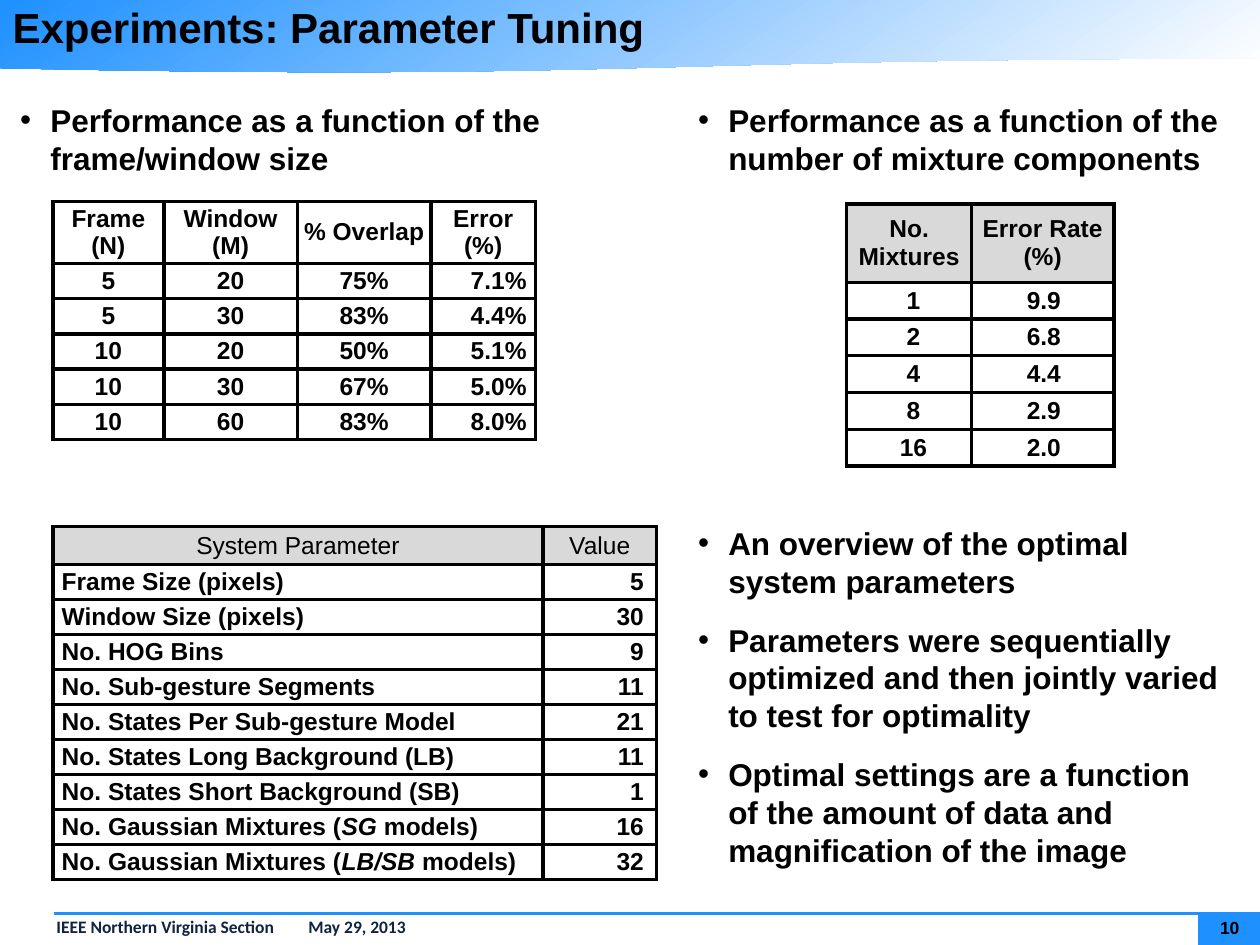
from dataclasses import dataclass

from lxml.etree import SubElement
from pptx import Presentation
from pptx.dml.color import RGBColor
from pptx.enum.shapes import MSO_CONNECTOR as Connector, MSO_SHAPE as Shape
from pptx.enum.text import MSO_ANCHOR as Anchor, MSO_AUTO_SIZE as AutoSize, PP_ALIGN as Align
from pptx.oxml.ns import qn
from pptx.util import Inches, Pt

COLORS = {"blue": "1E90FF", "white": "FFFFFF", "black": "000000",
          "navy": "0F243E", "gray": "D9D9D9"}
WIDTH, HEIGHT = Inches(10), Inches(7.5)
COLUMNS, ROWS = 100, 75
LEFT, CENTER, RIGHT, JUSTIFY = Align.LEFT, Align.CENTER, Align.RIGHT, Align.JUSTIFY


def across(columns: float) -> int:
    return round(WIDTH * columns / COLUMNS)


def down(rows: float) -> int:
    return round(HEIGHT * rows / ROWS)


@dataclass(frozen=True)
class Area:
    left: float
    top: float
    width: float
    height: float

    def box(self) -> tuple[int, int, int, int]:
        return across(self.left), down(self.top), across(self.width), down(self.height)


@dataclass(frozen=True)
class Bullets:
    area: Area
    lines: list[str]


@dataclass(frozen=True)
class Column:
    width: float
    align: Align
    insets: tuple[float, float] = (0.7, 0.7)


@dataclass(frozen=True)
class Grid:
    area: Area
    columns: list[Column]
    header_height: float
    header_fill: str
    header_bold: bool
    header_insets: tuple[float, float]
    lines: list[list[str]]


BULLETS = [
    Bullets(Area(1.6, 8, 42, 6.1),
            ["Performance as a function of the frame/window size"]),
    Bullets(Area(55.4, 8, 42, 6.1),
            ["Performance as a function of the number of mixture components"]),
    Bullets(Area(55.4, 41.6, 42, 27.6),
            ["An overview of the optimal system parameters",
             "Parameters were sequentially optimized and then jointly varied to test for optimality",
             "Optimal settings are a function of the amount of data and magnification of the image"]),
]

GRIDS = [
    Grid(Area(4.2, 16, 38.3, 18.9),
         [Column(8.8, CENTER), Column(10.6, CENTER), Column(10.6, CENTER), Column(8.3, RIGHT)],
         4.9, "white", True, (0.2, 0.2),
         [["Frame (N)", "Window (M)", "% Overlap", "Error (%)"],
          ["5", "20", "75%", "7.1%"],
          ["5", "30", "83%", "4.4%"],
          ["10", "20", "50%", "5.1%"],
          ["10", "30", "67%", "5.0%"],
          ["10", "60", "83%", "8.0%"]]),
    Grid(Area(4.2, 41.8, 47.9, 28),
         [Column(38.9, JUSTIFY), Column(9, RIGHT, (0.2, 1))],
         3, "gray", False, (0.7, 0.7),
         [["System Parameter", "Value"],
          ["Frame Size (pixels)", "5"],
          ["Window Size (pixels)", "30"],
          ["No. HOG Bins", "9"],
          ["No. Sub-gesture Segments", "11"],
          ["No. States Per Sub-gesture Model", "21"],
          ["No. States Long Background (LB)", "11"],
          ["No. States Short Background (SB)", "1"],
          ["No. Gaussian Mixtures (*SG* models)", "16"],
          ["No. Gaussian Mixtures (*LB/SB* models)", "32"]]),
    Grid(Area(67.2, 16.2, 21.2, 20.8),
         [Column(9.9, CENTER, (0.7, 0)), Column(11.3, CENTER, (0.2, 0))],
         6.2, "gray", True, (0.7, 0.7),
         [["No. Mixtures", "Error Rate (%)"],
          ["1", "9.9"], ["2", "6.8"], ["4", "4.4"], ["8", "2.9"], ["16", "2.0"]]),
]


def rgb(name: str) -> RGBColor:
    return RGBColor.from_string(COLORS[name])


def style(font, size: float, color: str = "black", name: str = "Arial", bold: bool = True) -> None:
    font.name, font.size, font.bold = name, Pt(size), bold
    font.color.rgb = rgb(color)


def add_text(page, area: Area, inset: bool = False):
    frame = page.shapes.add_textbox(*area.box()).text_frame
    frame.word_wrap = True
    frame.auto_size = AutoSize.SHAPE_TO_FIT_TEXT
    if not inset:
        frame.margin_left = frame.margin_right = frame.margin_top = frame.margin_bottom = 0
    return frame


def indent(para, left: float, first: float = 0):
    properties = para._p.get_or_add_pPr()
    properties.set("marL", str(across(left)))
    properties.set("indent", str(across(first)))
    return properties


def add_bullets(page, bullets: Bullets) -> None:
    frame = add_text(page, bullets.area)
    frame.text = "\n".join(bullets.lines)
    for para in frame.paragraphs:
        properties = indent(para, 2.4, -2.4)
        SubElement(properties, qn("a:buFont"), typeface="Arial")
        SubElement(properties, qn("a:buChar"), char="•")
        if len(bullets.lines) > 1:
            para.space_after = Pt(12)
        for span in para.runs:
            style(span.font, 18)


def add_borders(cell) -> None:
    properties = cell._tc.get_or_add_tcPr()
    for side in ("a:lnL", "a:lnR", "a:lnT", "a:lnB"):
        line = SubElement(properties, qn(side), w=str(Pt(2.25)))
        fill = SubElement(line, qn("a:solidFill"))
        SubElement(fill, qn("a:srgbClr"), val=COLORS["black"])


def fill_cell(cell, text: str, column: Column, grid: Grid, header: bool) -> None:
    add_borders(cell)
    cell.fill.solid()
    cell.fill.fore_color.rgb = rgb(grid.header_fill if header else "white")
    cell.vertical_anchor = Anchor.MIDDLE
    left, right = grid.header_insets if header else column.insets
    cell.margin_left, cell.margin_right = across(left), across(right)
    cell.margin_top = cell.margin_bottom = 0
    para = cell.text_frame.paragraphs[0]
    para.alignment = CENTER if header else column.align
    for number, part in enumerate(text.split("*")):
        span = para.add_run()
        span.text = part
        style(span.font, 14, bold=grid.header_bold or not header)
        span.font.italic = number % 2 == 1


def add_grid(page, grid: Grid) -> None:
    count = len(grid.lines)
    table = page.shapes.add_table(count, len(grid.columns), *grid.area.box()).table
    table.first_row = table.horz_banding = False
    body_height = (grid.area.height - grid.header_height) / (count - 1)
    for column, settings in zip(table.columns, grid.columns):
        column.width = across(settings.width)
    for number, line in enumerate(grid.lines):
        table.rows[number].height = down(body_height if number else grid.header_height)
        for place, text in enumerate(line):
            fill_cell(table.cell(number, place), text, grid.columns[place], grid, number == 0)


def add_block(page, kind: Shape, area: Area):
    block = page.shapes.add_shape(kind, *area.box())
    block.shadow.inherit = False
    block.line.fill.background()
    return block


def add_header(page) -> None:
    band = add_block(page, Shape.FLOWCHART_DOCUMENT, Area(0, 0, 100.1, 5.8))
    band.fill.gradient()
    band.fill.gradient_angle = 305
    for stop, color, position in zip(band.fill.gradient_stops, ("blue", "white"), (0, 1)):
        stop.color.rgb = rgb(color)
        stop.position = position

    title = page.shapes.title
    band.element.addnext(title.element)
    title.left, title.top, title.width, title.height = Area(0, 0, 100, 4.3).box()
    frame = title.text_frame
    frame.text = "Experiments: Parameter Tuning"
    frame.word_wrap = False
    frame.vertical_anchor = Anchor.MIDDLE
    frame.paragraphs[0].alignment = LEFT
    style(frame.paragraphs[0].runs[0].font, 24)


def add_footer(page) -> None:
    corner = add_block(page, Shape.RECTANGLE, Area(95.1, 72.4, 5, 2.6))
    corner.fill.solid()
    corner.fill.fore_color.rgb = rgb("blue")

    frame = add_text(page, Area(0.4, 72.3, 99.7, 2.6), inset=True)
    frame.text = "IEEE Northern Virginia Section\tMay 29, 2013"
    para = frame.paragraphs[0]
    tabs = SubElement(indent(para, 3.1), qn("a:tabLst"))
    SubElement(tabs, qn("a:tab"), pos=str(across(93.1)), algn="r")
    para.line_spacing = 0.95
    style(para.runs[0].font, 10, "navy", "Calibri")

    rule = page.shapes.add_connector(Connector.STRAIGHT, across(4.3), down(72.5), WIDTH, down(72.5))
    rule.line.color.rgb = rgb("blue")
    rule.line.width = Pt(1.5)
    SubElement(rule.element.spPr, qn("a:effectLst"))

    frame = add_text(page, Area(95.6, 72.8, 4, 1.7))
    frame.text = "10"
    frame.vertical_anchor = Anchor.MIDDLE
    frame.paragraphs[0].alignment = CENTER
    style(frame.paragraphs[0].runs[0].font, 10)


def main() -> None:
    deck = Presentation()
    deck.slide_width, deck.slide_height = WIDTH, HEIGHT
    page = deck.slides.add_slide(deck.slide_layouts[5])
    add_header(page)
    add_footer(page)
    for grid in GRIDS:
        add_grid(page, grid)
    for bullets in BULLETS:
        add_bullets(page, bullets)
    deck.save("out.pptx")


if __name__ == "__main__":
    main()
